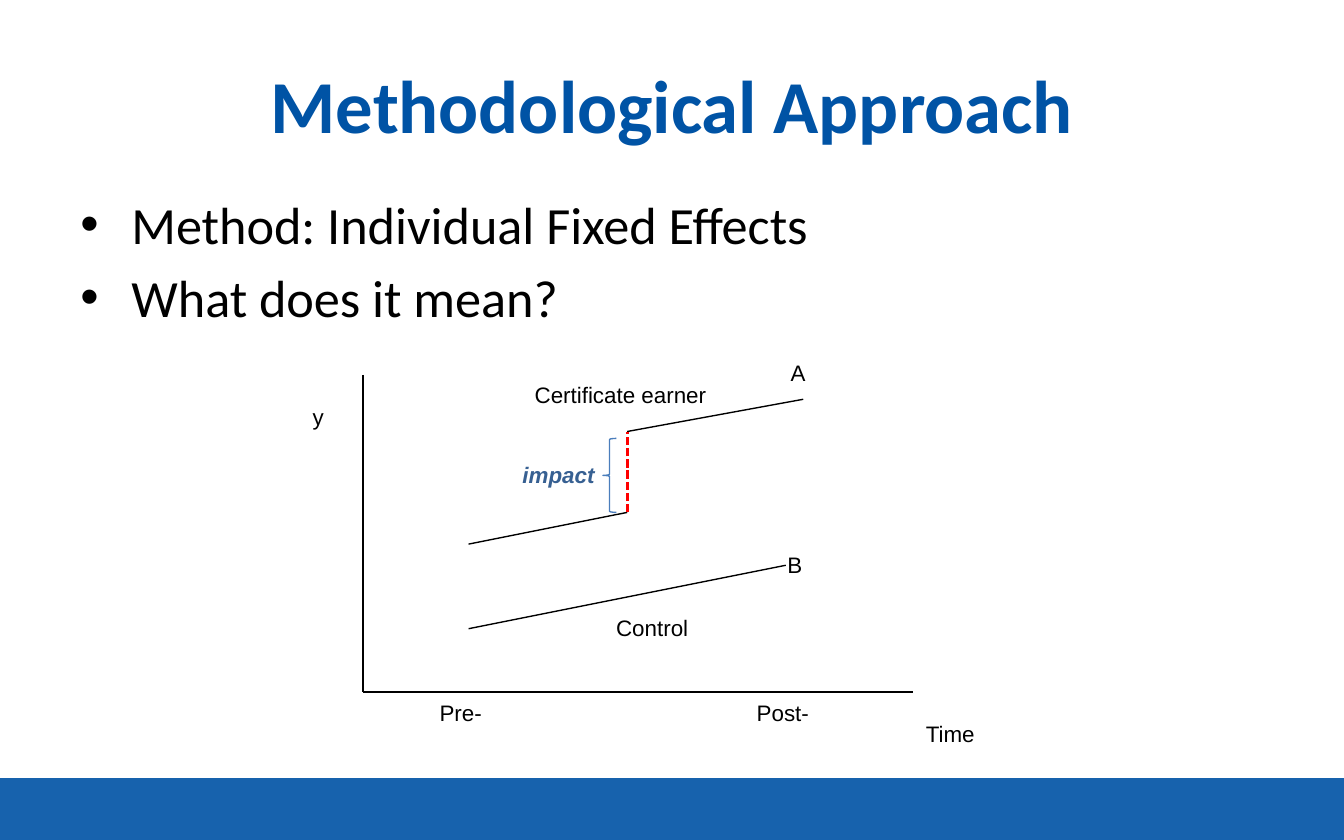
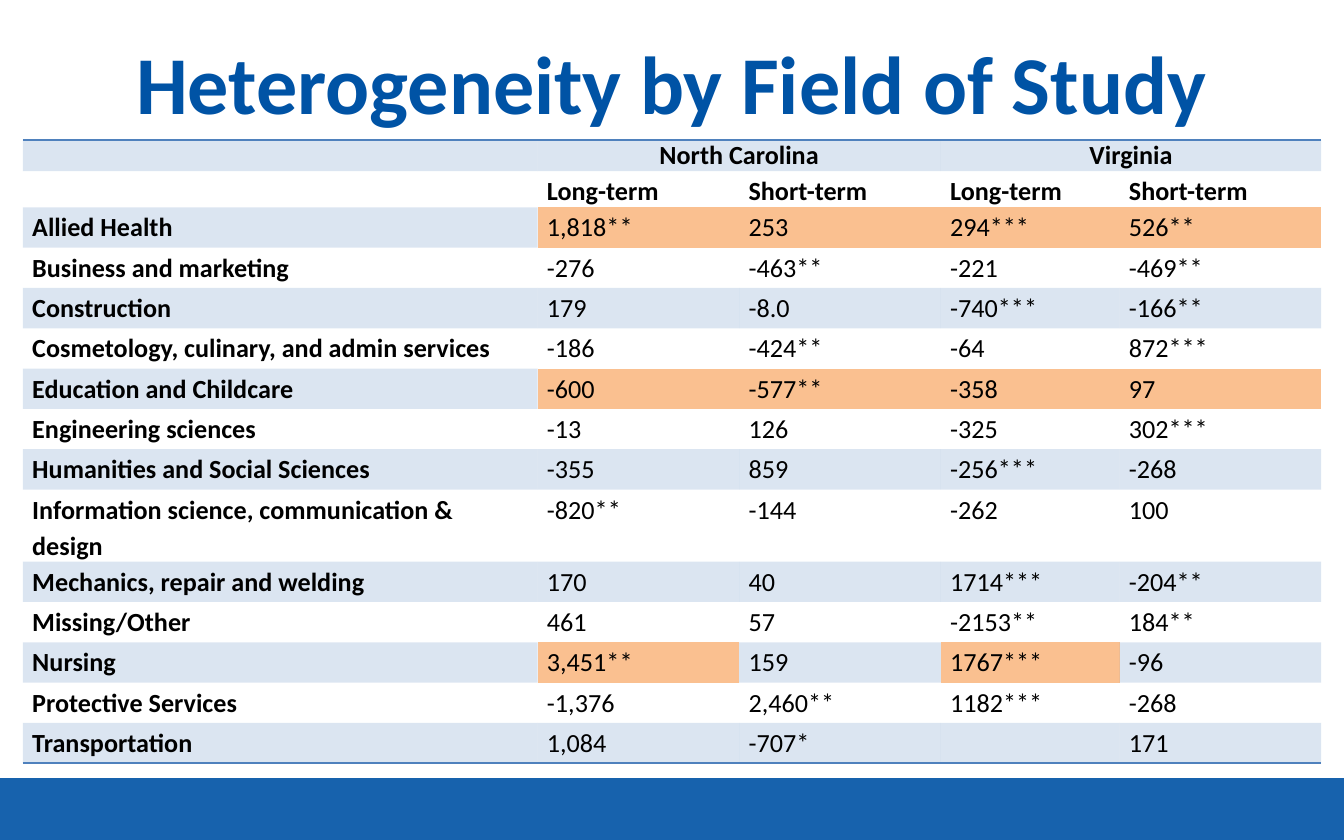
from lxml.etree import SubElement
from pptx import Presentation
from pptx.dml.color import RGBColor
from pptx.enum.dml import MSO_LINE
from pptx.enum.shapes import MSO_CONNECTOR, MSO_SHAPE
from pptx.enum.text import MSO_ANCHOR, PP_ALIGN
from pptx.oxml.ns import qn
from pptx.util import Emu, Inches, Pt

WIDTH, HEIGHT = Inches(10), Inches(6.25)
COLORS = {
    "brand": "0053A5",
    "text": "000000",
    "table": "4F81BD",
    "highlight": "FAC090",
    "jump": "FF0000",
    "brace": "4B7EBC",
    "impact": "376092",
}
NO_STYLE_NO_GRID = "{2D5ABB26-0587-4C30-8999-92F81FD0307C}"

# The diagram's grid: its origin is where the axes meet, and rows count upwards.
ORIGIN_X, ORIGIN_Y = Inches(2.7), Inches(5.15)
UNIT = Inches(2.36) / 30

DIAGRAM_LABELS = [  # text, column, row of the top, columns, rows
    ("y", -6, 28, 8, 6),
    ("Time", 52, -2, 12, 6),
    ("Certificate earner", 15, 30, 23, 6),
    ("Control", 22.7, 8, 18, 6),
    ("Pre-", 6, 0, 18, 6),
    ("Post-", 36, 0, 18, 6),
    ("A", 39.2, 32.1, 6, 6),
    ("B", 38.9, 14, 6, 6),
]
DIAGRAM_LINES = [  # start column and row, end column and row
    (0, 30, 0, 0),
    (0, 0, 52, 0),
    (10, 14, 25, 17),
    (10, 6, 40, 12),
    (25, 24.65, 41.65, 27.7),
]

COLUMN_SHARES = [38.3, 15, 15, 13.3, 15]
TERMS = ["Long-term", "Short-term"]
EFFECTS = [
    ["Allied Health", "1,818**", "253", "294***", "526**"],
    ["Business and marketing", "-276", "-463**", "-221", "-469**"],
    ["Construction", "179", "-8.0", "-740***", "-166**"],
    ["Cosmetology, culinary, and admin services", "-186", "-424**", "-64", "872***"],
    ["Education and Childcare", "-600", "-577**", "-358", "97"],
    ["Engineering sciences", "-13", "126", "-325", "302***"],
    ["Humanities and Social Sciences", "-355", "859", "-256***", "-268"],
    ["Information science, communication & design", "-820**", "-144", "-262", "100"],
    ["Mechanics, repair and welding", "170", "40", "1714***", "-204**"],
    ["Missing/Other", "461", "57", "-2153**", "184**"],
    ["Nursing", "3,451**", "159", "1767***", "-96"],
    ["Protective Services", "-1,376", "2,460**", "1182***", "-268"],
    ["Transportation", "1,084", "-707*", "", "171"],
]
HIGHLIGHTS = {
    "Allied Health": {1, 2, 3, 4},
    "Education and Childcare": {1, 2, 3, 4},
    "Nursing": {1, 3},
}


def rgb(name):
    return RGBColor.from_string(COLORS[name])


def share_box(left, top, width, height):
    """Turn percentages of the slide's size into lengths."""
    sides = (left, WIDTH), (top, HEIGHT), (width, WIDTH), (height, HEIGHT)
    return [Emu(round(share * side / 100)) for share, side in sides]


def grid_point(column, row):
    return Emu(round(ORIGIN_X + column * UNIT)), Emu(round(ORIGIN_Y - row * UNIT))


def grid_box(column, row, columns, rows):
    return *grid_point(column, row), Emu(round(columns * UNIT)), Emu(round(rows * UNIT))


def write(paragraph, text, size=12, font="Arial", color="text", bold=False,
          italic=False, align=None, line_spacing=None):
    paragraph.alignment = align
    paragraph.line_spacing = line_spacing
    if not text:
        SubElement(paragraph._p, qn("a:endParaRPr"), sz=str(size * 100))
        return
    run = paragraph.add_run()
    run.text = text
    run.font.size = Pt(size)
    run.font.name = font
    run.font.bold = bold
    run.font.italic = italic
    run.font.color.rgb = rgb(color)


def add_text(slide, box, text, anchor=MSO_ANCHOR.TOP, **text_format):
    frame = slide.shapes.add_textbox(*box).text_frame
    frame.word_wrap = True
    frame.vertical_anchor = anchor
    write(frame.paragraphs[0], text, **text_format)


def fill_solid(fill, properties, color, opacity=100):
    """Fill a shape or cell, whose XML properties carry the opacity in percent."""
    fill.solid()
    fill.fore_color.rgb = rgb(color)
    if opacity < 100:
        color_element = properties.find(qn("a:solidFill"))[0]
        SubElement(color_element, qn("a:alpha"), val=str(opacity * 1000))


def add_titled_slide(presentation, title, size, title_height):
    slide = presentation.slides.add_slide(presentation.slide_layouts[6])
    band = slide.shapes.add_shape(MSO_SHAPE.RECTANGLE, *share_box(0, 92.64, 100, 7.36))
    band.shadow.inherit = False
    band.line.fill.background()
    fill_solid(band.fill, band._element.spPr, "brand", opacity=91)
    add_text(slide, share_box(5, 4, 90, title_height), title, MSO_ANCHOR.MIDDLE,
             size=size, font="Calibri", color="brand", bold=True, align=PP_ALIGN.CENTER)
    return slide


def add_bullets(slide, box, items, size=28):
    frame = slide.shapes.add_textbox(*box).text_frame
    frame.word_wrap = True
    for index, item in enumerate(items):
        paragraph = frame.add_paragraph() if index else frame.paragraphs[0]
        properties = paragraph._p.get_or_add_pPr()
        properties.set("marL", str(Inches(0.38)))
        properties.set("indent", str(-Inches(0.38)))
        SubElement(properties, qn("a:buFont"), typeface="Arial")
        SubElement(properties, qn("a:buChar"), char="•")
        paragraph.space_before = Pt(0.2 * size if index else 0)
        write(paragraph, item, size=size, font="Calibri")


def add_line(slide, ends, color="text", width=0.75, dash=None):
    start, end = grid_point(*ends[:2]), grid_point(*ends[2:])
    line = slide.shapes.add_connector(MSO_CONNECTOR.STRAIGHT, *start, *end)
    line.line.color.rgb = rgb(color)
    line.line.width = Pt(width)
    line.line.dash_style = dash
    SubElement(line._element.spPr, qn("a:effectLst"))


def add_impact_diagram(slide):
    for ends in DIAGRAM_LINES:
        add_line(slide, ends)
    for label, *cells in DIAGRAM_LABELS:
        add_text(slide, grid_box(*cells), label)
    add_line(slide, (25, 17, 25, 24.65), "jump", 1.5, MSO_LINE.SQUARE_DOT)
    brace = slide.shapes.add_shape(MSO_SHAPE.LEFT_BRACE, *grid_box(22.7, 24, 1.27, 7))
    brace.shadow.inherit = False
    brace.fill.background()
    brace.line.color.rgb = rgb("brace")
    brace.line.width = Pt(0.75)
    add_text(slide, grid_box(13.85, 22.5, 10.2, 5), "impact",
             color="impact", bold=True, italic=True)


def add_border(cell, side):
    """Draw a border on a side, named as in XML: lnT or lnB."""
    border = cell._tc.get_or_add_tcPr().makeelement(qn(f"a:{side}"), {"w": str(Pt(1))})
    SubElement(SubElement(border, qn("a:solidFill")), qn("a:srgbClr"), val=COLORS["table"])
    cell._tc.tcPr.insert(0, border)


def format_cell(cell, row, column, text, highlighted):
    cell.margin_left = cell.margin_right = Inches(0.07)
    cell.margin_top = cell.margin_bottom = 0
    write(cell.text_frame.paragraphs[0], text, size=14, font="Calibri",
          bold=row < 2 or column == 0,
          align=None if row else PP_ALIGN.CENTER,
          line_spacing=1.15 if row else None)
    if highlighted:
        fill_solid(cell.fill, cell._tc.tcPr, "highlight")
    elif row % 2 == 0:
        fill_solid(cell.fill, cell._tc.tcPr, "table", opacity=20)
    else:
        cell.fill.background()


def add_effects_table(slide):
    rows = [["", "North Carolina", "", "Virginia", ""], ["", *TERMS, *TERMS], *EFFECTS]
    box = share_box(1.7, 16.64, sum(COLUMN_SHARES), 68)
    table = slide.shapes.add_table(len(rows), len(COLUMN_SHARES), *box).table
    table.first_row = table.horz_banding = False
    table._tbl.tblPr.find(qn("a:tableStyleId")).text = NO_STYLE_NO_GRID
    for column, share in zip(table.columns, COLUMN_SHARES):
        column.width = Emu(round(WIDTH * share / 100))
    for row, texts in enumerate(rows):
        table.rows[row].height = Inches(0.19 if row < 2 else 0.3)
        highlighted = HIGHLIGHTS.get(texts[0], set())
        for column, text in enumerate(texts):
            format_cell(table.cell(row, column), row, column, text, column in highlighted)
    for column in range(len(COLUMN_SHARES)):
        add_border(table.cell(0, column), "lnT")
        add_border(table.cell(len(rows) - 1, column), "lnB")
    for column in (1, 3):
        table.cell(0, column).merge(table.cell(0, column + 1))


def main():
    presentation = Presentation()
    presentation.slide_width, presentation.slide_height = WIDTH, HEIGHT

    method = add_titled_slide(presentation, "Methodological Approach", 40, 16.64)
    add_bullets(method, share_box(5, 22.08, 90, 67.36),
                ["Method: Individual Fixed Effects", "What does it mean?"])
    add_impact_diagram(method)

    fields = add_titled_slide(presentation, "Heterogeneity by Field of Study", 44, 11.36)
    add_effects_table(fields)

    presentation.save("out.pptx")


if __name__ == "__main__":
    main()
